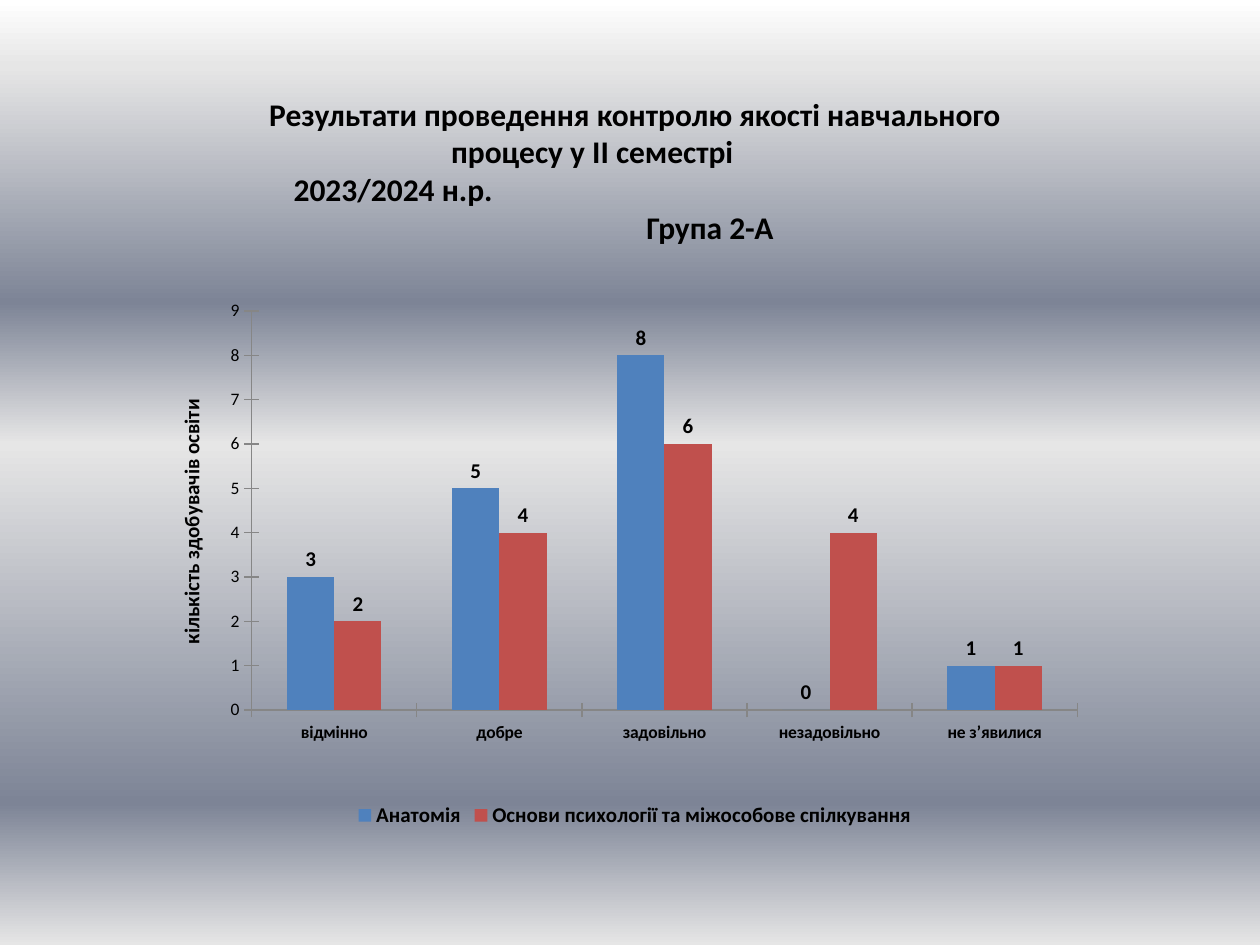
from lxml import etree
from pptx import Presentation
from pptx.chart.data import CategoryChartData
from pptx.dml.color import RGBColor
from pptx.enum import chart as ch, text
from pptx.oxml import parse_xml
from pptx.oxml.ns import nsdecls, qn
from pptx.util import Inches, Pt

BLACK = RGBColor(0x00, 0x00, 0x00)
AXIS_GREY = RGBColor(0x86, 0x86, 0x86)
BLUE = RGBColor(0x4F, 0x81, 0xBD)
RED = RGBColor(0xC0, 0x50, 0x4D)
WHITE = RGBColor(0xFF, 0xFF, 0xFF)
SILVER = RGBColor(0xE6, 0xE6, 0xE6)
STEEL = RGBColor(0x7D, 0x84, 0x96)
FONT = "Calibri"


def style(font, size, bold=True):
    font.name, font.size, font.bold = FONT, Pt(size), bold
    font.color.rgb = BLACK


prs = Presentation()
prs.slide_width, prs.slide_height = Inches(10), Inches(7.5)
slide = prs.slides.add_slide(prs.slide_layouts[5])

# Background: horizontal metallic bands, from top to bottom
background = slide.background.fill
background.gradient()
background.gradient_angle = 270
stops = slide.background._cSld.find(".//" + qn("a:gsLst"))
for stop in list(stops):
    stops.remove(stop)
for percent, color in [(0, WHITE), (7, SILVER), (32, STEEL),
                       (47, SILVER), (85, STEEL), (100, SILVER)]:
    stop = etree.SubElement(stops, qn("a:gs"), pos=str(percent * 1000))
    etree.SubElement(stop, qn("a:srgbClr"), val=str(color))

# Heading: centred lines, or lines indented from the left
heading = slide.shapes.title
heading.left, heading.top = Inches(1.14), Inches(0.75)
heading.width, heading.height = Inches(7.8), Inches(1.22)
frame = heading.text_frame
frame.margin_left = frame.margin_right = frame.margin_top = frame.margin_bottom = 0
frame.vertical_anchor = text.MSO_ANCHOR.TOP
frame.auto_size = text.MSO_AUTO_SIZE.NONE
lines = [
    ("Результати проведення контролю якості навчального", None),
    ("процесу у ІІ семестрі", 2.44),
    ("2023/2024 н.р.", 1.19),
    ("Група 2-А", None),
]
frame.text = "\n".join(line for line, indent in lines)
for paragraph, (line, indent) in zip(frame.paragraphs, lines):
    paragraph.alignment = text.PP_ALIGN.CENTER
    if indent:
        paragraph.alignment = text.PP_ALIGN.LEFT
        paragraph._p.get_or_add_pPr().set("marL", str(Inches(indent)))
    style(paragraph.runs[0].font, 18)

# Grades by subject
grades = CategoryChartData()
grades.categories = ["відмінно", "добре", "задовільно", "незадовільно", "не з’явилися"]
grades.add_series("Анатомія", (3, 5, 8, 0, 1))
grades.add_series("Основи психології та міжособове спілкування", (2, 4, 6, 4, 1))
chart = slide.shapes.add_chart(
    ch.XL_CHART_TYPE.COLUMN_CLUSTERED,
    Inches(1.14), Inches(0.52), Inches(7.8), Inches(6.09), grades).chart
chart.has_title = False
style(chart.font, 10, False)

columns = chart.plots[0]
columns.gap_width, columns.overlap = 150, 0
columns.vary_by_categories = False
for subject, color in zip(columns.series, (BLUE, RED)):
    subject.format.fill.solid()
    subject.format.fill.fore_color.rgb = color
    labels = subject.data_labels
    labels.show_value = True
    labels.position = ch.XL_LABEL_POSITION.OUTSIDE_END
    style(labels.font, 12)

marks, counts = chart.category_axis, chart.value_axis
for axis in (marks, counts):
    axis.has_major_gridlines = False
    axis.major_tick_mark = ch.XL_TICK_MARK.CROSS
    axis.format.line.color.rgb = AXIS_GREY
    axis.format.line.width = Pt(0.75)
style(marks.tick_labels.font, 10)
style(counts.tick_labels.font, 10, False)
counts.minimum_scale, counts.maximum_scale, counts.major_unit = 0, 9, 1
counts.axis_title.text_frame.text = "кількість здобувачів освіти"
style(counts.axis_title.text_frame.paragraphs[0].runs[0].font, 12)

chart.has_legend = True
chart.legend.position = ch.XL_LEGEND_POSITION.BOTTOM
chart.legend.include_in_layout = False
style(chart.legend.font, 12)

# Inner plot area, as fractions of the chart
plot_area = chart._chartSpace.chart.plotArea
for automatic in plot_area.findall(qn("c:layout")):
    plot_area.remove(automatic)
plot_area.insert(0, parse_xml(
    f'<c:layout {nsdecls("c")}><c:manualLayout><c:layoutTarget val="inner"/>'
    '<c:xMode val="edge"/><c:yMode val="edge"/><c:x val="0.11"/><c:y val="0.32"/>'
    '<c:w val="0.84"/><c:h val="0.52"/></c:manualLayout></c:layout>'))

prs.save("out.pptx")
